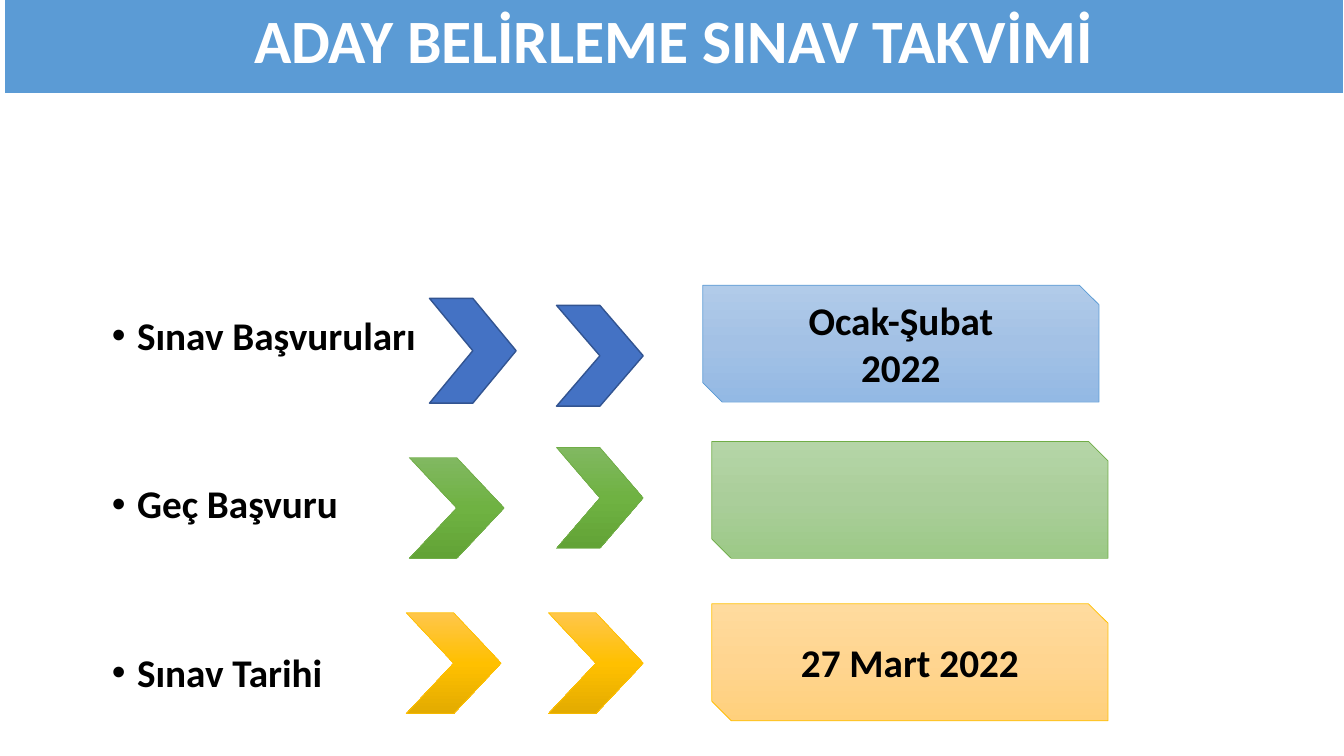
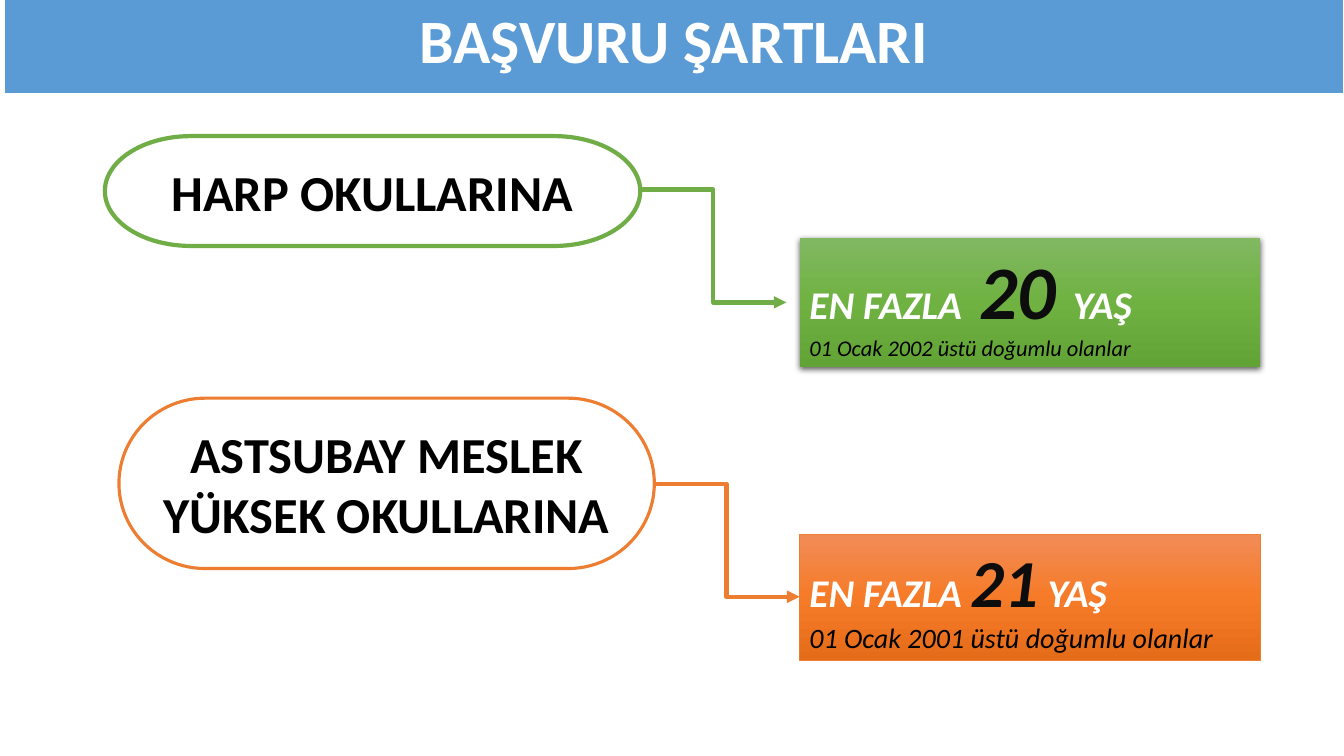
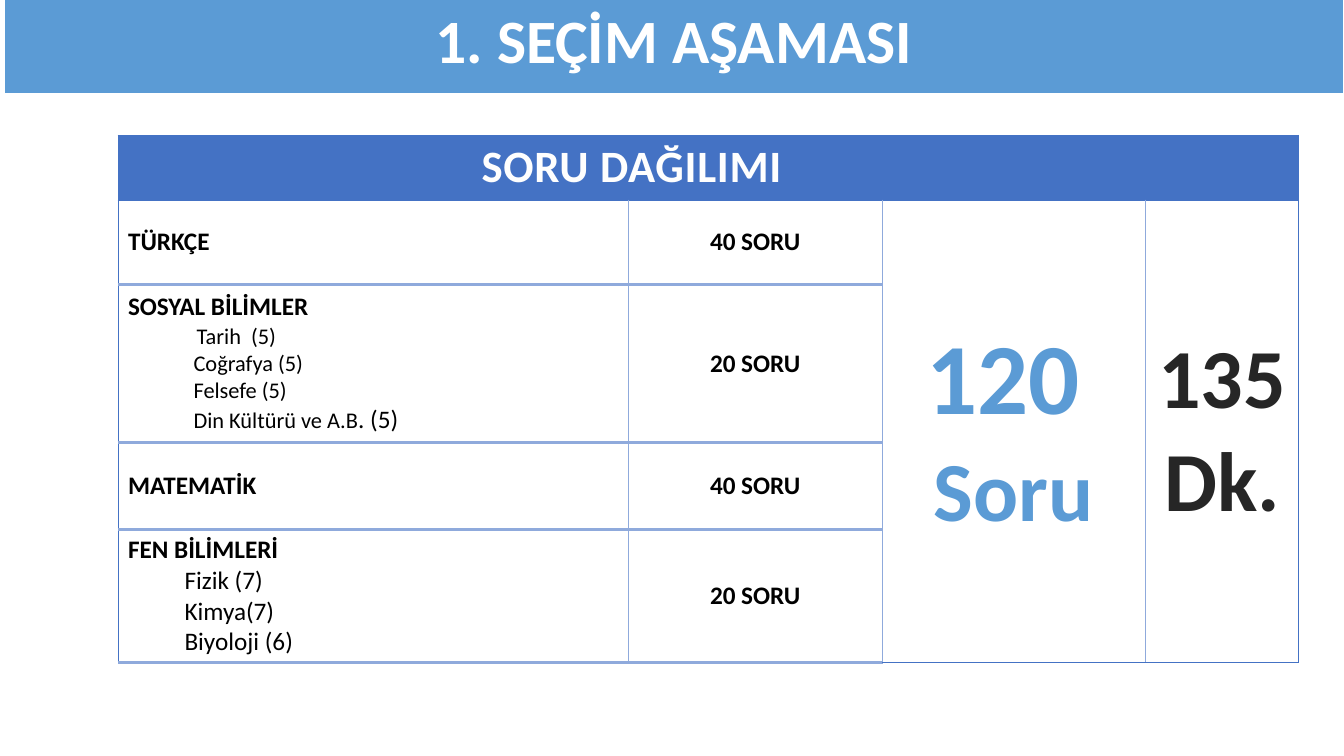
from copy import deepcopy
from dataclasses import dataclass

from lxml import etree
from pptx import Presentation
from pptx.dml.color import RGBColor
from pptx.enum.shapes import MSO_CONNECTOR, MSO_SHAPE
from pptx.enum.text import MSO_ANCHOR, MSO_AUTO_SIZE, PP_ALIGN
from pptx.oxml.ns import qn
from pptx.util import Inches, Pt

FONT = "Calibri"
BLACK, WHITE, INK = "000000", "FFFFFF", "0D0D0D"
SKY, BLUE, GREEN, GOLD, ORANGE = "5B9BD5", "4472C4", "70AD47", "FFC000", "ED7D31"
PALE_BLUE = "8FAADC"

GREEN_BLEND = ("81B861", "6FB242", "62A336")
GOLD_BLEND = ("FFC64B", "FFC000", "E3AB00")
ORANGE_BLEND = ("F18C57", "F67B28", "E56C19")
LIGHT_BLUE_BLEND = ("B1CBE9", "A3C1E5", "93B9E4")
LIGHT_GREEN_BLEND = ("B5D5A7", "AACE9A", "9CC987")
LIGHT_GOLD_BLEND = ("FFDB9E", "FFD590", "FFD07C")


@dataclass
class Span:
    text: str
    size: float
    color: str = BLACK
    bold: bool = True
    italic: bool = False
    indent: float = 0


def rgb(color):
    return RGBColor.from_string(color)


def lengths(*values):
    return [Inches(value) for value in values]


def place(shape, at):
    shape.left, shape.top, shape.width, shape.height = lengths(*at)


def style_font(font, span):
    font.name, font.size = FONT, Pt(span.size)
    font.bold, font.italic = span.bold, span.italic
    font.color.rgb = rgb(span.color)


def write(frame, lines, align=PP_ALIGN.LEFT):
    """Write one paragraph per line; a line is a Span or a list of Spans."""
    for index, line in enumerate(lines):
        spans = line if isinstance(line, list) else [line]
        para = frame.paragraphs[0] if index == 0 else frame.add_paragraph()
        para.alignment = align
        if spans[0].indent:
            para._p.get_or_add_pPr().set("marL", str(Inches(spans[0].indent)))
        for span in spans:
            run = para.add_run()
            run.text = span.text
            style_font(para.font if len(spans) == 1 else run.font, span)


def paint(shape, fill):
    """Fill with one colour, or with three colours blended downwards."""
    if isinstance(fill, str):
        shape.fill.solid()
        shape.fill.fore_color.rgb = rgb(fill)
        return
    shape.fill.gradient()
    shape.fill.gradient_angle = 270
    stop_list = shape._element.spPr.find(qn("a:gradFill")).find(qn("a:gsLst"))
    stop_list.append(deepcopy(stop_list[-1]))
    for stop, color, position in zip(shape.fill.gradient_stops, fill, (0, 0.5, 1)):
        stop.color.rgb = rgb(color)
        stop.position = position


def draw_line(line, color, width):
    line.color.rgb = rgb(color)
    line.width = Pt(width)


def add_shadow(shape):
    effects = shape._element.spPr.find(qn("a:effectLst"))
    shadow = etree.SubElement(effects, qn("a:outerShdw"), blurRad=str(Pt(4.5)),
                              dist=str(Pt(1.5)), dir="5400000", rotWithShape="0")
    color = etree.SubElement(shadow, qn("a:srgbClr"), val=BLACK)
    etree.SubElement(color, qn("a:alpha"), val="63000")


def set_border(cell, side, edge):
    """Draw one side (L, R, T or B) as (colour, points), or hide it."""
    properties = cell._tc.get_or_add_tcPr()
    line = etree.SubElement(properties, qn(f"a:ln{side}"))
    if edge is None:
        etree.SubElement(line, qn("a:noFill"))
        return
    color, width = edge
    line.set("w", str(Pt(width)))
    fill = etree.SubElement(line, qn("a:solidFill"))
    etree.SubElement(fill, qn("a:srgbClr"), val=color)


class Deck:
    """Holds the shared style and the current slide."""

    TITLE_AND_BODY, TITLE_ONLY = 1, 5

    def __init__(self):
        self.presentation = Presentation()
        self.presentation.slide_width, self.presentation.slide_height = lengths(13.33, 7.5)
        self.page = None

    def start(self, title, layout=TITLE_ONLY):
        layouts = self.presentation.slide_layouts
        self.page = self.presentation.slides.add_slide(layouts[layout])
        band = self.page.shapes.title
        place(band, (0.04, -0.06, 13.29, 0.99))
        paint(band, SKY)
        draw_line(band.line, WHITE, 1.5)
        frame = band.text_frame
        frame.auto_size = MSO_AUTO_SIZE.NONE
        frame.vertical_anchor = MSO_ANCHOR.MIDDLE
        write(frame, [Span(title, 44, WHITE)], PP_ALIGN.CENTER)
        frame.paragraphs[0].line_spacing = 0.9

    def bullets(self, at, items, gap):
        body = self.page.placeholders[1]
        place(body, at)
        frame = body.text_frame
        frame.auto_size = MSO_AUTO_SIZE.NONE
        write(frame, [Span(item, 28, indent=0.25) for item in items])
        for para in frame.paragraphs:
            para.line_spacing = 0.9
            para.space_before, para.space_after = Pt(0), Pt(gap)
            para._p.get_or_add_pPr().set("indent", str(Inches(-0.25)))

    def shape(self, kind, at, fill, line=None, lines=(), align=PP_ALIGN.CENTER):
        shape = self.page.shapes.add_shape(kind, *lengths(*at))
        shape.shadow.inherit = False
        paint(shape, fill)
        if line:
            draw_line(shape.line, *line)
        else:
            shape.line.fill.background()
        write(shape.text_frame, lines, align)
        return shape

    def elbow_arrow(self, start, end, color):
        arrow = self.page.shapes.add_connector(MSO_CONNECTOR.ELBOW, *lengths(*start, *end))
        draw_line(arrow.line, color, 3)
        properties = arrow._element.spPr
        etree.SubElement(properties.find(qn("a:ln")), qn("a:tailEnd"), type="triangle")
        etree.SubElement(properties, qn("a:effectLst"))

    def table(self, at, widths, heights, merges):
        """Add a bordered table; merges are (first cell, last cell) pairs."""
        table = self.page.shapes.add_table(len(heights), len(widths), *lengths(*at)).table
        table.first_row = table.horz_banding = False
        for column, width in zip(table.columns, widths):
            column.width = Inches(width)
        for row, height in zip(table.rows, heights):
            row.height = Inches(height)
        for first, last in merges:
            table.cell(*first).merge(table.cell(*last))
        outer, inner, divider = (BLUE, 0.5), (PALE_BLUE, 1), (PALE_BLUE, 2.25)
        for r in range(len(heights)):
            for c in range(len(widths)):
                cell = table.cell(r, c)
                if cell.is_spanned:
                    continue
                upright = inner if r else None
                set_border(cell, "L", upright if c else outer)
                set_border(cell, "R", outer if c == len(widths) - 1 else upright)
                set_border(cell, "T", outer if r < 2 or c > 1 else divider)
                set_border(cell, "B", outer if r == 0 or c > 1 else divider)
                cell.fill.solid()
                cell.fill.fore_color.rgb = rgb(WHITE if r else BLUE)
                cell.vertical_anchor = MSO_ANCHOR.MIDDLE
        return table


def build_calendar(deck):
    deck.start("ADAY BELİRLEME SINAV TAKVİMİ", Deck.TITLE_AND_BODY)
    deck.bullets((1.01, 3.09, 11.5, 3.93),
                 ["Sınav Başvuruları", "Geç Başvuru", "Sınav Tarihi"], gap=90)
    steps = [
        (BLUE, ("325491", 1), [(4.26, 2.96, 0.86, 1.04), (5.52, 3.03, 0.86, 1)],
         LIGHT_BLUE_BLEND, SKY, (6.97, 2.83), ["Ocak-Şubat", "2022"]),
        (GREEN_BLEND, (GREEN, 0.5), [(4.06, 4.54, 0.94, 1), (5.52, 4.44, 0.86, 1)],
         LIGHT_GREEN_BLEND, GREEN, (7.06, 4.38), []),
        (GOLD_BLEND, (GOLD, 0.5), [(4.03, 6.08, 0.94, 1), (5.44, 6.08, 0.94, 1)],
         LIGHT_GOLD_BLEND, GOLD, (7.06, 5.99), ["27 Mart 2022"]),
    ]
    for fill, line, chevrons, date_fill, date_line, corner, dates in steps:
        for at in chevrons:
            deck.shape(MSO_SHAPE.CHEVRON, at, fill, line)
        deck.shape(MSO_SHAPE.SNIP_2_DIAG_RECTANGLE, (*corner, 3.93, 1.16), date_fill,
                   (date_line, 0.5), [Span(date, 28) for date in dates])


def build_conditions(deck):
    deck.start("BAŞVURU ŞARTLARI")
    schools = [
        ("HARP OKULLARINA", (1.04, 1.35, 5.31, 1.09), (GREEN, 3)),
        ("ASTSUBAY MESLEK YÜKSEK OKULLARINA", (1.18, 3.95, 5.31, 1.69), (ORANGE, 2.25)),
    ]
    for name, at, line in schools:
        deck.shape(MSO_SHAPE.FLOWCHART_TERMINATOR, at, WHITE, line, [Span(name, 36)])
    for start, color in [((6.35, 1.88), GREEN), ((6.48, 4.8), ORANGE)]:
        deck.elbow_arrow(start, (start[0] + 1.45, start[1] + 1.12), color)

    def age_lines(age, age_size, birth, birth_size):
        return [[Span("EN FAZLA", 28, WHITE, italic=True),
                 Span(age, age_size, INK, italic=True),
                 Span("YAŞ", 28, WHITE, italic=True)],
                Span(birth, birth_size, bold=False, italic=True)]

    lower = age_lines("21", 48, "01 Ocak 2001 üstü doğumlu olanlar", 20)
    lower[0][0].text += " "
    lower[0][2].text = " " + lower[0][2].text
    upper = age_lines(" 20 ", 54, "01 Ocak 2002 üstü doğumlu olanlar", 16)
    upper_box = deck.shape(MSO_SHAPE.RECTANGLE, (7.93, 2.36, 4.57, 1.28), GREEN_BLEND,
                           lines=upper, align=PP_ALIGN.LEFT)
    add_shadow(upper_box)
    deck.shape(MSO_SHAPE.RECTANGLE, (7.93, 5.3, 4.57, 1.25), ORANGE_BLEND, (ORANGE, 0.5),
               lower, PP_ALIGN.LEFT)


def build_questions(deck):
    deck.start("1. SEÇİM AŞAMASI")
    table = deck.table((1.17, 1.34, 11.71, 5.23), (5.06, 2.52, 2.61, 1.52),
                       (0.64, 0.84, 1.57, 0.86, 1.32),
                       [((0, 0), (0, 2)), ((1, 2), (4, 2)), ((1, 3), (4, 3))])
    heading = table.cell(0, 0).text_frame
    write(heading, [Span("SORU DAĞILIMI", 32, "FEFEFE")], PP_ALIGN.CENTER)
    heading.paragraphs[0]._p.pPr.find(qn("a:defRPr")).set("spc", "50")

    def topic(text, size, indent):
        return Span(text, size, bold=False, indent=indent)

    subjects = [
        ("TÜRKÇE", "40 SORU", []),
        ("SOSYAL BİLİMLER", "20 SORU", [
            topic("Tarih  (5)", 16, 0.68), topic("Coğrafya (5)", 16, 0.65),
            topic("Felsefe (5)", 16, 0.65),
            [topic("Din Kültürü ve A.B", 16, 0.65), topic(". (5)", 18, 0)]]),
        ("MATEMATİK", "40 SORU", []),
        ("FEN BİLİMLERİ", "20 SORU", [
            topic(text, 18, 0.56) for text in ("Fizik (7)", "Kimya(7)", "Biyoloji (6)")]),
    ]
    for row, (name, count, topics) in enumerate(subjects, 1):
        write(table.cell(row, 0).text_frame, [Span(name, 18), *topics])
        write(table.cell(row, 1).text_frame, [Span(count, 18)], PP_ALIGN.CENTER)
    write(table.cell(1, 2).text_frame,
          [[Span("120", 72, SKY), Span(" ", 66, SKY)], Span("Soru", 60, SKY)],
          PP_ALIGN.CENTER)
    write(table.cell(1, 3).text_frame, [Span("135 Dk.", 60, "262626")], PP_ALIGN.CENTER)


def main():
    deck = Deck()
    for build in (build_calendar, build_conditions, build_questions):
        build(deck)
    deck.presentation.save("out.pptx")


if __name__ == "__main__":
    main()
